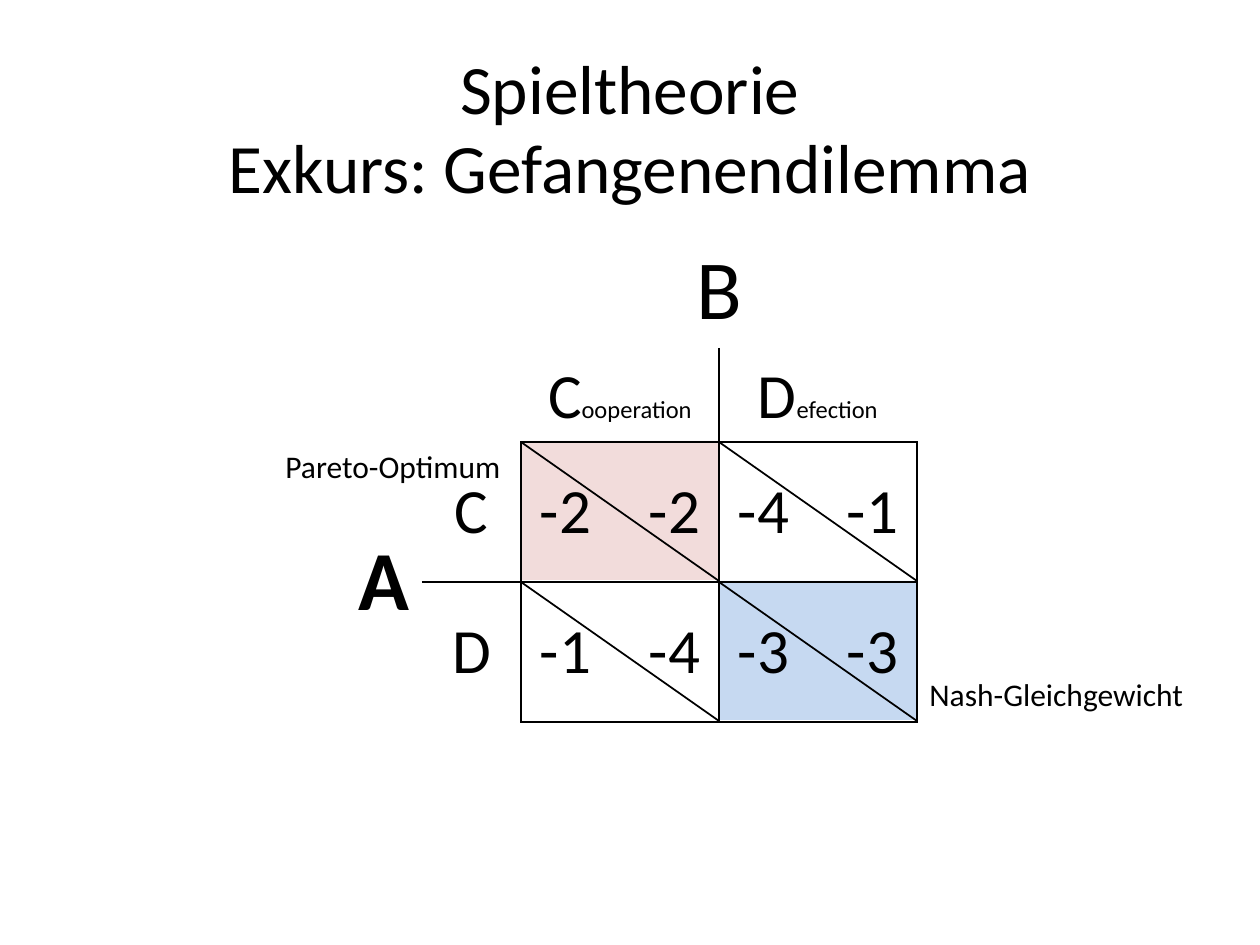
from dataclasses import dataclass
from lxml.etree import SubElement
from pptx import Presentation
from pptx.dml.color import RGBColor
from pptx.enum.shapes import MSO_CONNECTOR, MSO_SHAPE
from pptx.enum.text import MSO_ANCHOR, PP_ALIGN
from pptx.oxml.ns import qn
from pptx.util import Pt


def px(num):
    return round(num * 914400 / 126)


@dataclass(frozen=True)
class Theme:
    font: str = "Calibri"
    ink: str = "000000"
    rose: str = "F2DCDB"
    blue: str = "C6D9F1"
    head: float = 39.6
    giant: int = 48
    large: int = 36
    note: int = 18
    small: int = 14
    rule: int = 1
    plain: str = "{2D5ABB26-0587-4C30-8999-92F81FD0307C}"


def write(para, text, size, theme, bold=False, align=PP_ALIGN.CENTER, tab=None):
    para.alignment = align
    if tab:
        stops = SubElement(para._p.get_or_add_pPr(), qn("a:tabLst"))
        SubElement(stops, qn("a:tab"), pos=str(px(tab)), algn="l")
    run = para.add_run()
    run.text = text
    font = run.font
    font.name, font.size, font.bold = theme.font, Pt(size), bold
    font.color.rgb = RGBColor.from_string(theme.ink)


class Board:
    def __init__(self, slide, theme):
        self.shapes = slide.shapes
        self.theme = theme

    def block(self, left, top, wide, high, fill):
        shape = self.shapes.add_shape(MSO_SHAPE.RECTANGLE, *map(px, (left, top, wide, high)))
        shape.shadow.inherit = False
        shape.fill.solid()
        shape.fill.fore_color.rgb = RGBColor.from_string(fill)
        shape.line.fill.background()

    def label(self, text, left, top, wide, high, size, wrap=False,
              align=PP_ALIGN.LEFT, anchor=MSO_ANCHOR.TOP):
        frame = self.shapes.add_textbox(*map(px, (left, top, wide, high))).text_frame
        frame.word_wrap = wrap
        frame.vertical_anchor = anchor
        write(frame.paragraphs[0], text, size, self.theme, align=align)

    def line(self, left, top, right, low):
        line = self.shapes.add_connector(MSO_CONNECTOR.STRAIGHT, *map(px, (left, top, right, low)))
        line.line.width = Pt(self.theme.rule)
        line.line.color.rgb = RGBColor.from_string(self.theme.ink)
        SubElement(line._element.spPr, qn("a:effectLst"))

    def table(self, left, top, cols, rows):
        size = map(px, (left, top, sum(cols), sum(rows)))
        table = self.shapes.add_table(len(rows), len(cols), *size).table
        table.first_row = table.horz_banding = False
        table._tbl.tblPr.find(qn("a:tableStyleId")).text = self.theme.plain
        for col, wide in zip(table.columns, cols):
            col.width = px(wide)
        for row, high in zip(table.rows, rows):
            row.height = px(high)
        return table

    def cell(self, cell, runs=(), sides="", anchor=MSO_ANCHOR.MIDDLE, inset=None, **style):
        cell.vertical_anchor = anchor
        if inset:
            cell.margin_left, cell.margin_right = px(inset), 0
        for text, size in runs:
            write(cell.text_frame.paragraphs[0], text, size, self.theme, **style)
        props = cell._tc.get_or_add_tcPr()
        for side in "LRTB":
            edge = SubElement(props, qn(f"a:ln{side}"), w=str(Pt(self.theme.rule)))
            if side in sides:
                fill = SubElement(edge, qn("a:solidFill"))
                SubElement(fill, qn("a:srgbClr"), val=self.theme.ink)
            else:
                SubElement(edge, qn("a:noFill"))
        cell.fill.background()


def main():
    deck = Presentation()
    deck.slide_width, deck.slide_height = px(1260), px(945)
    theme = Theme()
    board = Board(deck.slides.add_slide(deck.slide_layouts[6]), theme)
    left, top, wide, high = 521, 442, 198, 140

    for step, fill in enumerate((theme.rose, theme.blue)):
        board.block(left + step * wide, top - 1 + step * high, wide, high - 1, fill)

    title = dict(size=theme.head, wrap=True, align=PP_ALIGN.CENTER, anchor=MSO_ANCHOR.MIDDLE)
    board.label("Spieltheorie", 63, 38, 1134, 97, **title)

    grid = board.table(303, 232, (119, 99, wide, wide), (116, 94, high, high))
    big, large = theme.giant, theme.large
    low = MSO_ANCHOR.BOTTOM
    cells = {
        (0, 2): dict(runs=[("B", big)], anchor=low),
        (1, 2): dict(runs=[("C", large), ("ooperation", theme.small)], sides="RB", anchor=low),
        (1, 3): dict(runs=[("D", large), ("efection", theme.small)], sides="LB", anchor=low),
        (2, 0): dict(runs=[("A", big)], bold=True, align=PP_ALIGN.RIGHT),
        (2, 1): dict(runs=[("C", large)], sides="RB"),
        (3, 1): dict(runs=[("D", large)], sides="TR"),
    }
    scores = ((("-2", "-2"), ("-4", "-1")), (("-1", "-4"), ("-3", "-3")))
    for row, pairs in enumerate(scores):
        for col, pair in enumerate(pairs):
            cells[row + 2, col + 2] = dict(runs=[("\t".join(pair), large)], sides="LRTB",
                                           inset=19, align=PP_ALIGN.LEFT, tab=109)
    for row in range(4):
        for col in range(4):
            board.cell(grid.cell(row, col), **cells.get((row, col), {}))
    for start, end in (((0, 0), (1, 1)), ((0, 2), (0, 3)), ((2, 0), (3, 0))):
        grid.cell(*start).merge(grid.cell(*end))

    board.label("Exkurs: Gefangenendilemma", 63, 124, 1134, 84, **title)
    for row in range(2):
        for col in range(2):
            x, y = left + col * wide, top + row * high
            board.line(x, y, x + wide, y + high - 1)
    board.label("Nash-Gleichgewicht", 917, 669, 282, 50, theme.note)
    board.label("Pareto-Optimum", 273, 441, 243, 50, theme.note)
    deck.save("out.pptx")


if __name__ == "__main__":
    main()
